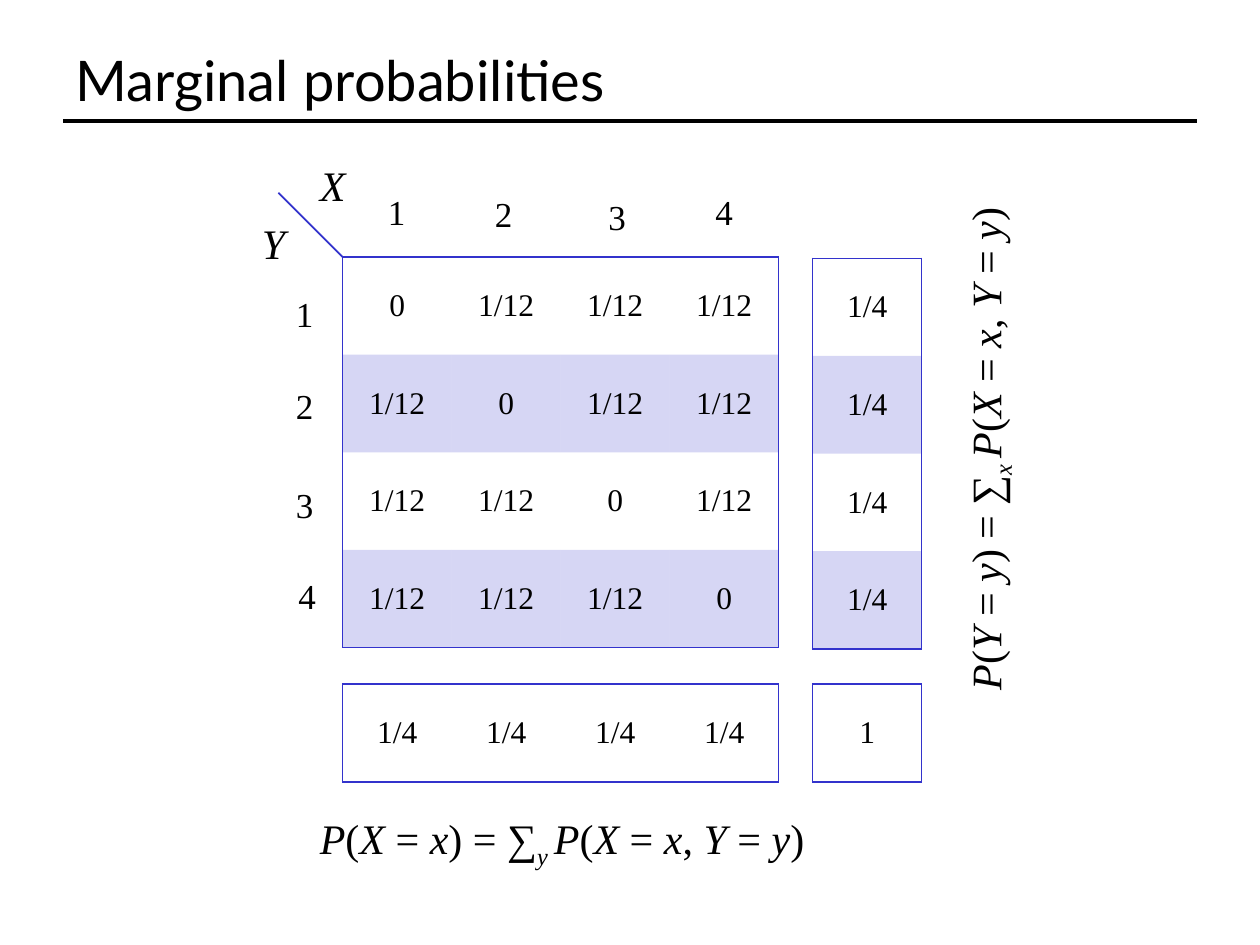
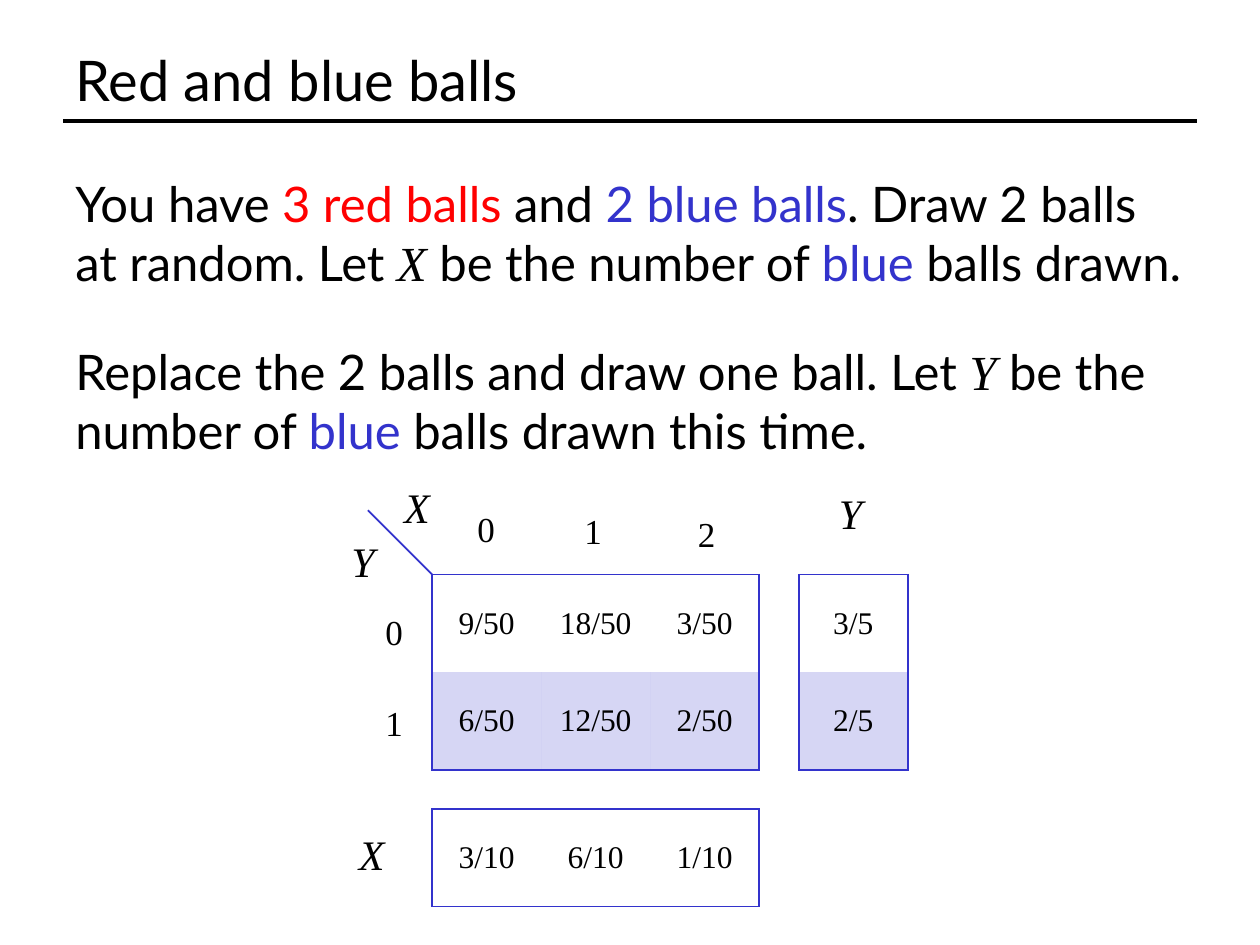
from itertools import groupby
from lxml import etree
from pptx import Presentation
from pptx import util as u
from pptx.dml.color import RGBColor
from pptx.enum import shapes, text
from pptx.oxml.ns import qn

PX = 4572
BLACK, BLUE, RED = "000000", "3333CC", "FF0000"
SANS, SERIF = "Lato", "Times New Roman"
NO_GRID = "{2D5ABB26-0587-4C30-8999-92F81FD0307C}"
CELL_W, CELL_H = 173, 155
COLUMN_LABELS = [(52, -116), (222, -113), (402, -108), (572, -116)]
ROW_LABELS = [(-94, 47), (-94, 192), (-94, 350), (-90, 494)]


def px(n):
    return u.Emu(n * PX)


def rgb(color):
    return RGBColor.from_string(color)


def add_run(p, words, size, font=SANS, color=BLACK, italic=False, sub=False):
    r = p.add_run()
    r.text = words
    r.font.size, r.font.name, r.font.italic = u.Pt(size), font, italic
    r.font.color.rgb = rgb(color)
    if sub:
        r.font._element.set("baseline", "-25000")


def add_math(p, formula, size=24, sub=False):
    for italic, letters in groupby(formula, str.isalpha):
        add_run(p, "".join(letters), size, SERIF, italic=italic, sub=sub)


def add_box(s, x, y, w, h, wrap=False, grow=True):
    sp = s.shapes.add_textbox(px(x), px(y), px(w), px(h))
    tf = sp.text_frame
    tf.word_wrap = wrap
    tf.auto_size = text.MSO_AUTO_SIZE.SHAPE_TO_FIT_TEXT if grow else text.MSO_AUTO_SIZE.NONE
    return sp, tf.paragraphs[0]


def add_line(s, x1, y1, x2, y2, color, width):
    ln = s.shapes.add_connector(shapes.MSO_CONNECTOR.STRAIGHT, px(x1), px(y1), px(x2), px(y2))
    ln.line.color.rgb, ln.line.width = rgb(color), u.Pt(width)
    etree.SubElement(ln._element.spPr, qn("a:effectLst"))


def add_slide(prs, title):
    s = prs.slides.add_slide(prs.slide_layouts[6])
    add_line(s, 100, 192, 1900, 192, BLACK, 2)
    sp, p = add_box(s, 100, 60, 1800, 132, wrap=True, grow=False)
    sp.text_frame.vertical_anchor = text.MSO_ANCHOR.MIDDLE
    add_run(p, title, 32)
    return s


def add_body(s, y, runs):
    sp, p = add_box(s, 100, y, 1800, 208, wrap=True)
    for words, color in runs:
        if color == "math":
            add_math(p, words, 28)
        else:
            add_run(p, words, 28, color=color)


def add_variable(s, name, x, y):
    sp, p = add_box(s, x, y, 106 if name == "X" else 100, 100)
    add_math(p, name)


def add_formula(s, x, y, left, index, rotation=0):
    sp, p = add_box(s, x, y, 854, 100)
    sp.rotation = rotation
    add_math(p, left + " = ∑")
    add_math(p, index + " ", sub=True)
    add_math(p, "P(X = x, Y = y)")


def shade(cell):
    cell.fill.solid()
    cell.fill.fore_color.rgb = rgb(BLUE)
    color = cell._tc.tcPr.find(".//" + qn("a:srgbClr"))
    etree.SubElement(color, qn("a:alpha"), val="20000")


def add_borders(cell, sides):
    for i, side in enumerate(sides):
        ln = etree.Element(qn("a:ln" + side), w="12700")
        fill = etree.SubElement(ln, qn("a:solidFill"))
        etree.SubElement(fill, qn("a:srgbClr"), val=BLUE)
        cell._tc.get_or_add_tcPr().insert(i, ln)


def add_grid(s, x, y, rows):
    rows = [row.split() for row in rows]
    n, m = len(rows), len(rows[0])
    tbl = s.shapes.add_table(n, m, px(x), px(y), px(m * CELL_W), px(n * CELL_H)).table
    tbl.first_row = tbl.horz_banding = False
    tbl._tbl.tblPr.find(qn("a:tableStyleId")).text = NO_GRID
    for i, row in enumerate(rows):
        tbl.rows[i].height = px(CELL_H)
        for j, value in enumerate(row):
            cell = tbl.cell(i, j)
            cell.vertical_anchor = text.MSO_ANCHOR.MIDDLE
            p = cell.text_frame.paragraphs[0]
            p.alignment = text.PP_ALIGN.CENTER
            add_run(p, value, 18, SERIF)
            if i % 2:
                shade(cell)
            edges = {"L": j == 0, "R": j == m - 1, "T": i == 0, "B": i == n - 1}
            add_borders(cell, [side for side, outer in edges.items() if outer])


def add_joint_table(s, x, y, columns, row_names, rows, x_name):
    add_grid(s, x, y, rows)
    add_line(s, x, y, x - 102, y - 102, BLUE, 1)
    for names, places in ((columns, COLUMN_LABELS), (row_names, ROW_LABELS)):
        for name, (dx, dy) in zip(names, places):
            sp, p = add_box(s, x + dx, y + dy, 66, 88)
            p.alignment = text.PP_ALIGN.CENTER
            add_run(p, name, 20, SERIF)
    add_variable(s, "X", *x_name)
    add_variable(s, "Y", x - 148, y - 72)


def marginal_slide(prs):
    s = add_slide(prs, "Marginal probabilities")
    joint = [" ".join("0" if i == j else "1/12" for j in range(4)) for i in range(4)]
    add_joint_table(s, 544, 408, "1234", "1234", joint, (488, 244))
    add_grid(s, 544, 1086, ["1/4 1/4 1/4 1/4"])
    add_grid(s, 1290, 410, ["1/4"] * 4)
    add_grid(s, 1290, 1086, ["1"])
    add_formula(s, 488, 1280, "P(X = x)", "y")
    add_formula(s, 1136, 638, "P(Y = y)", "x", 270)


def balls_slide(prs):
    s = add_slide(prs, "Red and blue balls")
    add_body(s, 266, [("You have ", BLACK), ("3 red balls ", RED), ("and ", BLACK),
                      ("2 blue balls", BLUE), (". Draw 2 balls at random. Let ", BLACK),
                      ("X", "math"), (" be the number of ", BLACK), ("blue", BLUE),
                      (" balls drawn.", BLACK)])
    add_body(s, 532, [("Replace the 2 balls and draw one ball. Let ", BLACK), ("Y", "math"),
                      (" be the number of ", BLACK), ("blue", BLUE),
                      (" balls drawn this time.", BLACK)])
    add_joint_table(s, 686, 912, "012", "01", ["9/50 18/50 3/50", "6/50 12/50 2/50"], (622, 754))
    add_grid(s, 1268, 912, ["3/5", "2/5"])
    add_grid(s, 686, 1284, ["3/10 6/10 1/10"])
    add_variable(s, "X", 550, 1306)
    add_variable(s, "Y", 1312, 764)


def main():
    prs = Presentation()
    prs.slide_width, prs.slide_height = px(2000), px(1500)
    marginal_slide(prs)
    balls_slide(prs)
    prs.save("out.pptx")


if __name__ == "__main__":
    main()
